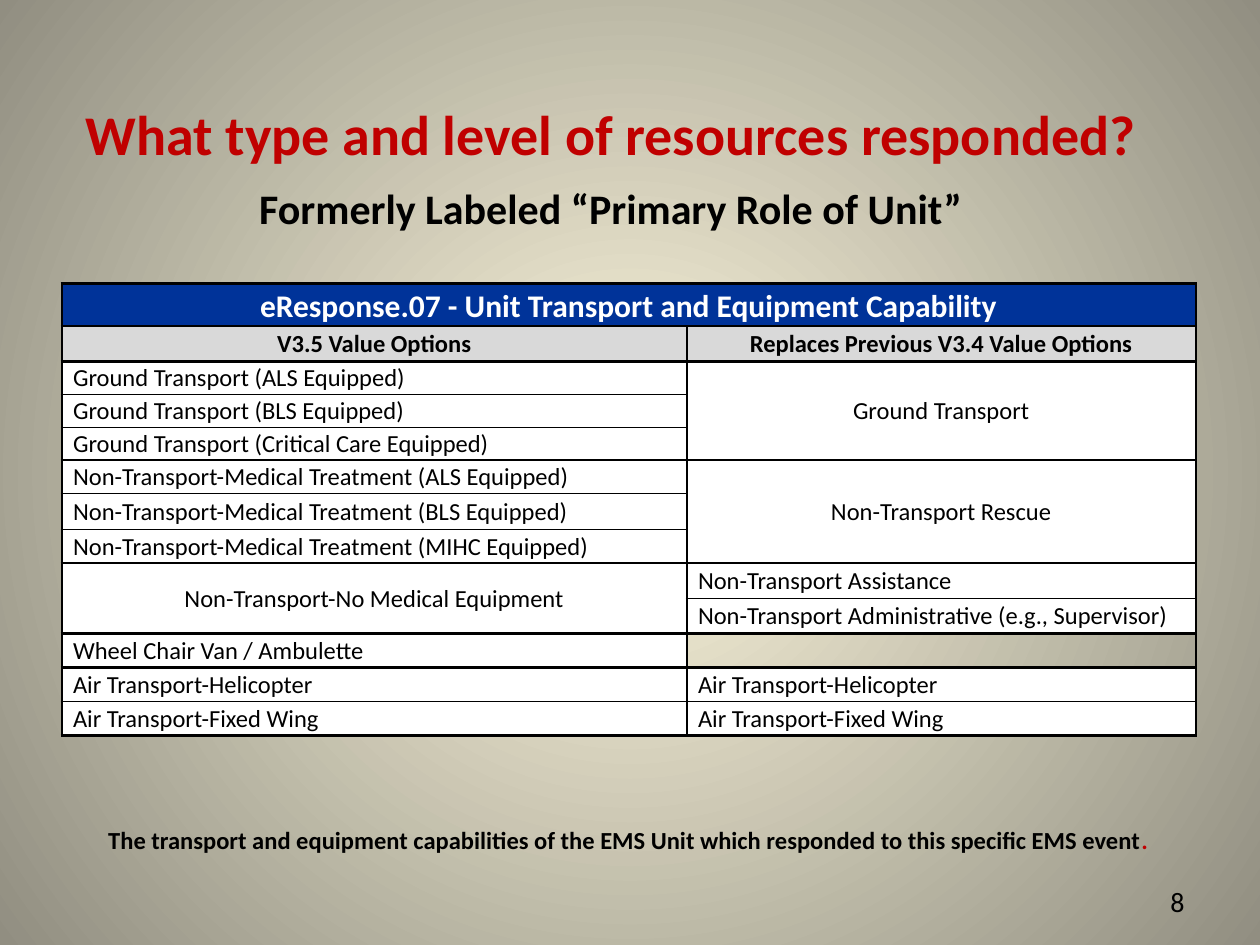
"""Build the slide on unit transport and equipment capability."""
from lxml.etree import SubElement
from pptx import Presentation
from pptx.dml.color import RGBColor
from pptx.enum.text import MSO_ANCHOR as Anchor, MSO_AUTO_SIZE as AutoSize, PP_ALIGN as Align
from pptx.oxml.ns import qn
from pptx.util import Inches, Pt

FONT = "Calibri"
BLACK, RED, WHITE, NAVY, GREY = "000000", "C00000", "FFFFFF", "003399", "D9D9D9"
GLOW = ["FCF7DD", "918E81"]
THICK, THIN = 1.5, 0.5

TITLE = "What type and level of resources responded?"
SUBTITLE = "Formerly Labeled “Primary Role of Unit” "
FOOTNOTE = "The transport and equipment capabilities of the EMS Unit which responded to this specific EMS event"
HEADING = "eResponse.07 - Unit Transport and Equipment Capability"
COLUMNS = ["V3.5 Value Options", "Replaces Previous V3.4 Value Options"]
AIR = ["Air Transport-Helicopter", "Air Transport-Fixed Wing"]
GROUPS = [
    (["Ground Transport (ALS Equipped)",
      "Ground Transport (BLS Equipped)",
      "Ground Transport (Critical Care Equipped)"],
     ["Ground Transport"]),
    (["Non-Transport-Medical Treatment (ALS Equipped)",
      "Non-Transport-Medical Treatment (BLS Equipped)",
      "Non-Transport-Medical Treatment (MIHC Equipped)"],
     ["Non-Transport Rescue"]),
    (["Non-Transport-No Medical Equipment"],
     ["Non-Transport Assistance", "Non-Transport Administrative (e.g., Supervisor)"]),
    (["Wheel Chair Van / Ambulette"], [""]),
    (AIR, AIR),
]
COL_WIDTHS = [4.96, 4.04]
ROW_HEIGHTS = [0.34, 0.28] + [0.26] * 3 + [0.27, 0.28, 0.27] + [0.28] * 2 + [0.27] * 3


def rgb(value):
    return RGBColor.from_string(value)


def add_run(p, text, size, color=BLACK, bold=False):
    r = p.add_run()
    r.text = text
    r.font.name, r.font.size, r.font.bold = FONT, Pt(size), bold
    r.font.color.rgb = rgb(color)


def place(sp, left, top, width, height):
    sp.left, sp.top, sp.width, sp.height = map(Inches, (left, top, width, height))


def add_text(s, box, align):
    tf = s.shapes.add_textbox(*map(Inches, box)).text_frame
    tf.word_wrap = True
    tf.paragraphs[0].alignment = align
    return tf


def set_background(s):
    fill = s.background.fill
    fill.gradient()
    for stop, color, position in zip(fill.gradient_stops, GLOW, (0, 1)):
        stop.color.rgb, stop.position = rgb(color), position
    grad = s.element.find(".//" + qn("a:gradFill"))
    grad.remove(grad.find(qn("a:lin")))
    circle = SubElement(grad, qn("a:path"), {"path": "circle"})
    SubElement(circle, qn("a:fillToRect"), dict.fromkeys("ltrb", "50000"))


def style_cell(cell, text="", size=14, bold=False, fill=None, centred=True,
               top=THICK, bottom=THICK, anchor=Anchor.MIDDLE):
    tc_pr = cell._tc.get_or_add_tcPr()
    for side, width in zip("LRTB", (THICK, THICK, top, bottom)):
        ln = SubElement(tc_pr, qn("a:ln" + side), {"w": str(Pt(width))})
        SubElement(SubElement(ln, qn("a:solidFill")), qn("a:srgbClr"), {"val": BLACK})
    if fill:
        cell.fill.solid()
        cell.fill.fore_color.rgb = rgb(fill)
    else:
        cell.fill.background()
    cell.vertical_anchor = anchor
    cell.margin_left = Inches(0.01 if centred else 0.09)
    cell.margin_right = cell.margin_top = Inches(0.01)
    cell.margin_bottom = 0
    p = cell.text_frame.paragraphs[0]
    p.alignment = Align.CENTER if centred else Align.LEFT
    if text:
        add_run(p, text, size, WHITE if fill == NAVY else BLACK, bold)
    else:
        SubElement(p._p, qn("a:endParaRPr"), {"sz": str(size * 100)})


def fill_group(table, first, col, values, count):
    """Fill one column of a group, merging a lone value over all its rows."""
    merged = len(values) < count
    for i in range(count):
        text = values[i] if i < len(values) else ""
        style_cell(table.cell(first + i, col), text, centred=merged,
                   fill=WHITE if text or merged else None,
                   top=THICK if merged or i == 0 else THIN,
                   bottom=THICK if merged or i == count - 1 else THIN)
    if merged:
        table.cell(first, col).merge(table.cell(first + count - 1, col))


def add_value_table(s):
    table = s.shapes.add_table(len(ROW_HEIGHTS), 2, Inches(0.49), Inches(2.25),
                               Inches(sum(COL_WIDTHS)), Inches(sum(ROW_HEIGHTS))).table
    table.first_row = table.horz_banding = False
    for column, width in zip(table.columns, COL_WIDTHS):
        column.width = Inches(width)
    for row, height in zip(table.rows, ROW_HEIGHTS):
        row.height = Inches(height)
    for col, label in enumerate(COLUMNS):
        style_cell(table.cell(0, col), "" if col else HEADING, 18, True, NAVY,
                   anchor=Anchor.BOTTOM)
        style_cell(table.cell(1, col), label, bold=True, fill=GREY)
    table.cell(0, 0).merge(table.cell(0, 1))
    first = 2
    for group in GROUPS:
        count = max(map(len, group))
        for col, values in enumerate(group):
            fill_group(table, first, col, values, count)
        first += count


def main():
    prs = Presentation()
    prs.slide_width, prs.slide_height = Inches(10), Inches(7.5)
    s = prs.slides.add_slide(prs.slide_layouts[5])
    set_background(s)

    title = s.shapes.title
    place(title, 0.58, 0.74, 8.61, 1.18)
    tf = title.text_frame
    tf.word_wrap, tf.auto_size, tf.vertical_anchor = False, AutoSize.SHAPE_TO_FIT_TEXT, Anchor.TOP
    p = tf.paragraphs[0]
    p.alignment, p.space_after = Align.LEFT, Pt(4.5)
    add_run(p, TITLE, 32, RED, True)
    p = tf.add_paragraph()
    p.alignment, p.space_before, p.space_after = Align.CENTER, Pt(4.5), Pt(4.5)
    add_run(p, SUBTITLE, 24, BLACK, True)

    add_value_table(s)

    p = add_text(s, (0.32, 6.5, 9.33, 0.34), Align.CENTER).paragraphs[0]
    add_run(p, FOOTNOTE, 14, BLACK, True)
    add_run(p, ".", 14, RED, True)

    tf = add_text(s, (7.17, 6.97, 2.33, 0.37), Align.RIGHT)
    tf.vertical_anchor = Anchor.MIDDLE
    add_run(tf.paragraphs[0], "8", 16)
    prs.save("out.pptx")


if __name__ == "__main__":
    main()
